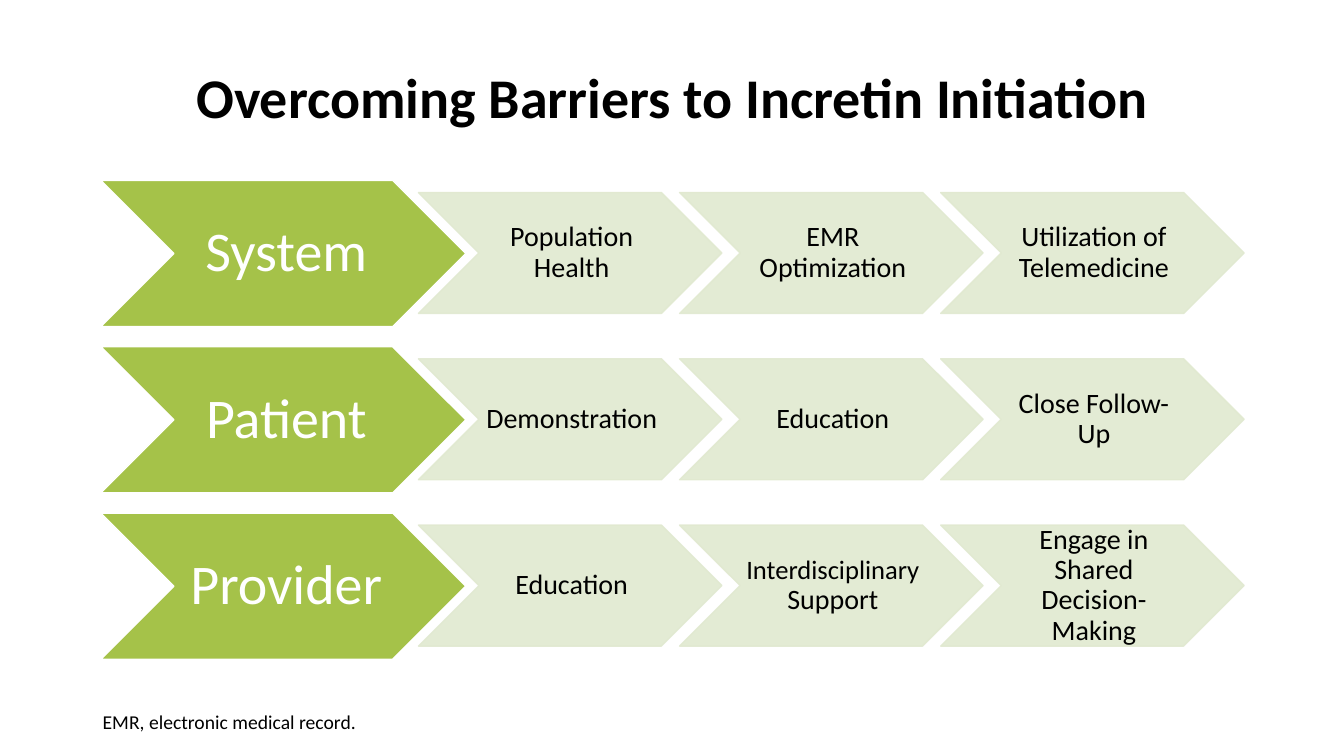
import pptx
import pptx.dml.color
import pptx.enum.shapes
import pptx.enum.text
import pptx.oxml
import pptx.oxml.ns
import pptx.util

RGBColor = pptx.dml.color.RGBColor
ALIGN = pptx.enum.text.PP_ALIGN
ANCHOR = pptx.enum.text.MSO_ANCHOR
AUTO_SIZE = pptx.enum.text.MSO_AUTO_SIZE

GREEN = RGBColor(0xA5, 0xC2, 0x49)
PALE_GREEN = RGBColor(0xE1, 0xE9, 0xD0)
WHITE = RGBColor(0xFF, 0xFF, 0xFF)
BLACK = RGBColor(0x00, 0x00, 0x00)

FONT = "Calibri"
PX = 9144  # 100 px to the inch
ROW_STEP = 165
STRATEGY_STEP = 259

# A strategy is a list of (text, size) spans.
BARRIERS = [
    ("System", [
        [("Population Health", 20)],
        [("EMR Optimization", 20)],
        [("Utilization of Telemedicine", 20)],
    ]),
    ("Patient", [
        [("Demonstration", 20)],
        [("Education", 20)],
        [("Close Follow-Up", 20)],
    ]),
    ("Provider", [
        [("Education", 20)],
        [("Interdisciplinary", 19), (" Support", 20)],
        [("Engage in Shared Decision-Making", 20)],
    ]),
]


def emu(*lengths):
    return [pptx.util.Emu(length * PX) for length in lengths]


def add_span(para, text, *, size, color=BLACK, bold=False):
    span = para.add_run()
    span.text = text
    span.font.name = FONT
    span.font.size = pptx.util.Pt(size)
    span.font.color.rgb = color
    span.font.bold = bold


def centre_text(frame):
    """Centre the frame's text both ways and return its first paragraph."""
    frame.word_wrap = True
    frame.auto_size = AUTO_SIZE.NONE
    frame.vertical_anchor = ANCHOR.MIDDLE
    para = frame.paragraphs[0]
    para.alignment = ALIGN.CENTER
    para.line_spacing = 0.9
    return para


def set_opacity(shape, percent):
    """Apply one opacity to the fill and the outline."""
    for color in shape.element.spPr.iter(pptx.oxml.ns.qn("a:srgbClr")):
        alpha = pptx.oxml.parse_xml(
            f'<a:alpha {pptx.oxml.ns.nsdecls("a")} val="{percent * 1000}"/>')
        color.append(alpha)


def add_chevron(page, box, spans, *, fill, line, color, margins):
    shape = page.shapes.add_shape(
        pptx.enum.shapes.MSO_SHAPE.CHEVRON, *emu(*box))
    shape.shadow.inherit = False
    shape.fill.solid()
    shape.fill.fore_color.rgb = fill
    shape.line.color.rgb = line
    shape.line.width = pptx.util.Pt(1)
    frame = shape.text_frame
    (frame.margin_left, frame.margin_top,
     frame.margin_right, frame.margin_bottom) = emu(*margins)
    para = centre_text(frame)
    for text, size in spans:
        add_span(para, text, size=size, color=color)
    return shape


def add_barrier_row(page, left, top, barrier, strategies):
    add_chevron(page, (left, top, 362, 145), [(barrier, 40)],
                fill=GREEN, line=WHITE, color=WHITE, margins=(6, 3, 0, 3))
    for column, spans in enumerate(strategies):
        box = (left + 315 + column * STRATEGY_STEP, top + 12, 301, 120)
        chevron = add_chevron(page, box, spans, fill=PALE_GREEN,
                              line=PALE_GREEN, color=BLACK,
                              margins=(3, 1, 0, 1))
        set_opacity(chevron, 90)


def add_title(page, box, text):
    title = page.shapes.title
    title.left, title.top, title.width, title.height = emu(*box)
    add_span(centre_text(title.text_frame), text, size=40, bold=True)


def add_footnote(page, box, text):
    frame = page.shapes.add_textbox(*emu(*box)).text_frame
    frame.word_wrap = True
    frame.auto_size = AUTO_SIZE.SHAPE_TO_FIT_TEXT
    add_span(frame.paragraphs[0], text, size=14)


def main():
    deck = pptx.Presentation()
    deck.slide_width, deck.slide_height = emu(1333, 750)
    page = deck.slides.add_slide(deck.slide_layouts.get_by_name("Title Only"))
    add_title(page, (0, 66, 1333, 67),
              "Overcoming Barriers to Incretin Initiation")
    for row, (barrier, strategies) in enumerate(BARRIERS):
        add_barrier_row(page, 100, 179 + row * ROW_STEP, barrier, strategies)
    add_footnote(page, (92, 699, 666, 34), "EMR, electronic medical record.")
    deck.save("out.pptx")


if __name__ == "__main__":
    main()
